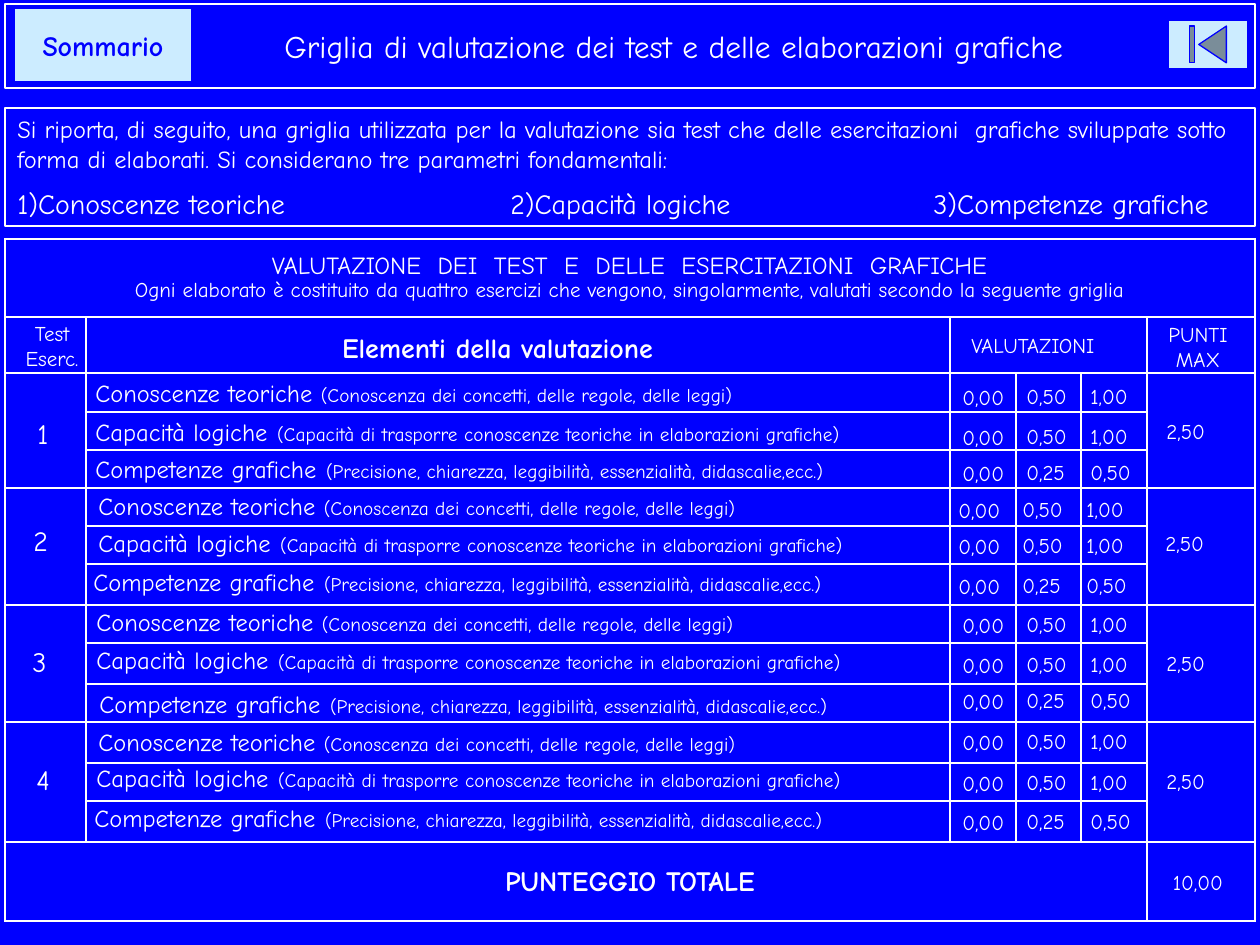
from lxml.etree import SubElement
from pptx import Presentation
from pptx.dml.color import RGBColor
from pptx.enum.shapes import MSO_SHAPE
from pptx.enum.text import MSO_ANCHOR, PP_ALIGN
from pptx.oxml.ns import qn
from pptx.util import Pt

PX = 914400 // 126
COLORS = {"blue": "0000FF", "white": "FFFFFF", "pale": "CCECFF"}
FONT = "Comic Neue"
LEFT, CENTER = PP_ALIGN.LEFT, PP_ALIGN.CENTER


def write(frame, runs, align=LEFT, bold=False, color="white"):
    """Fill the first paragraph with (text, size) runs."""
    frame.word_wrap = True
    para = frame.paragraphs[0]
    para.alignment = align
    para.font.name = FONT
    para.font.bold = bold
    para.font.color.rgb = RGBColor.from_string(COLORS[color])
    para.font.size = Pt(runs[0][1])
    for text, size in runs:
        run = para.add_run()
        run.text = text
        if size != runs[0][1]:
            run.font.size = Pt(size)


def label(x, y, w, h, runs, align=LEFT, bold=False):
    box = slide.shapes.add_textbox(x * PX, y * PX, w * PX, h * PX)
    write(box.text_frame, runs, align, bold)


prs = Presentation()
prs.slide_width, prs.slide_height = 1260 * PX, 945 * PX
slide = prs.slides.add_slide(prs.slide_layouts[6])
slide.background.fill.solid()
slide.background.fill.fore_color.rgb = RGBColor.from_string(COLORS["blue"])

# Buttons and framed boxes
shapes = []
for kind, x, y, w, h, fill, line, width in [
    (MSO_SHAPE.ACTION_BUTTON_CUSTOM, 14, 8, 178, 74, "pale", "blue", 0),
    (MSO_SHAPE.RECTANGLE, 5, 4, 1250, 84, None, "white", 0.75),
    (MSO_SHAPE.RECTANGLE, 5, 108, 1250, 118, None, "white", 1),
    (MSO_SHAPE.ACTION_BUTTON_BEGINNING, 1168, 20, 80, 49, "pale", "blue", 0),
]:
    shape = slide.shapes.add_shape(kind, x * PX, y * PX, w * PX, h * PX)
    shape.shadow.inherit = False
    if fill:
        shape.fill.solid()
        shape.fill.fore_color.rgb = RGBColor.from_string(COLORS[fill])
    else:
        shape.fill.background()
    shape.line.color.rgb = RGBColor.from_string(COLORS[line])
    shape.line.width = Pt(width)
    shapes.append(shape)

button, title, intro, _ = shapes
write(button.text_frame, [("Sommario", 16)], CENTER, True, "blue")
title.text_frame.margin_left = 100 * PX
write(title.text_frame,
      [("Griglia di valutazione dei test e delle elaborazioni grafiche", 18)], CENTER)
intro.text_frame.vertical_anchor = MSO_ANCHOR.TOP
write(intro.text_frame, [(
    "Si riporta, di seguito, una griglia utilizzata per la valutazione sia test che "
    "delle esercitazioni  grafiche sviluppate sotto forma di elaborati. "
    "Si considerano tre parametri fondamentali:", 14)])

# Table grid
cols = [81, 864, 66, 65, 66, 108]
rows = [78, 56, 39, 38, 38, 38, 38, 41, 38, 41, 38, 41, 38, 41, 79]
grid = slide.shapes.add_table(len(rows), len(cols), 5 * PX, 239 * PX,
                              sum(cols) * PX, sum(rows) * PX).table
grid.first_row = grid.horz_banding = False
for col, width in zip(grid.columns, cols):
    col.width = width * PX
for row, height in zip(grid.rows, rows):
    row.height = height * PX
for cell in grid.iter_cells():
    cell.margin_left = cell.margin_right = cell.margin_top = cell.margin_bottom = 0
    cell.vertical_anchor = MSO_ANCHOR.MIDDLE
    props = cell._tc.get_or_add_tcPr()
    for side in ("lnL", "lnR", "lnT", "lnB"):
        line = SubElement(props, qn(f"a:{side}"), w=str(Pt(1)))
        SubElement(SubElement(line, qn("a:solidFill")), qn("a:srgbClr"),
                   val=COLORS["white"])
    cell.fill.background()
    if cell is not None:
        SubElement(cell.text_frame.paragraphs[0]._p, qn("a:endParaRPr"), sz="800")

spans = [(0, 0, 0, 5), (1, 2, 1, 4), (14, 0, 14, 4)]
spans += [(top, col, top + 2, col) for top in range(2, 14, 3) for col in (0, 5)]
for top, left, bottom, right in spans:
    grid.cell(top, left).merge(grid.cell(bottom, right))

head = grid.cell(0, 0).text_frame
head.add_paragraph()
for para, text, size in zip(head.paragraphs, [
    "VALUTAZIONE  DEI  TEST  E  DELLE  ESERCITAZIONI  GRAFICHE",
    "Ogni elaborato è costituito da quattro esercizi che vengono, singolarmente, "
    "valutati secondo la seguente griglia",
], (14, 12)):
    para.add_run().text = text
    para.alignment = CENTER
    para.line_spacing = 0.9
    para.font.name = FONT
    para.font.size = Pt(size)
    para.font.color.rgb = RGBColor.from_string(COLORS["white"])

# Parameters, column heads and total
for x, y, w, h, text, size, align, bold in [
    (5, 180, 328, 47, "1)Conoscenze teoriche", 16, LEFT, False),
    (498, 180, 265, 47, "2)Capacità logiche", 16, LEFT, False),
    (921, 180, 334, 47, "3)Competenze grafiche", 16, LEFT, False),
    (6, 314, 92, 63, "Test Eserc.", 12, CENTER, False),
    (304, 324, 387, 47, "Elementi della valutazione", 16, CENTER, True),
    (959, 326, 213, 38, "VALUTAZIONI", 12, LEFT, False),
    (1142, 315, 112, 63, "PUNTI MAX", 12, CENTER, False),
    (431, 857, 398, 47, "PUNTEGGIO TOTALE", 16, CENTER, True),
    (1148, 863, 100, 38, "10,00", 12, CENTER, False),
]:
    label(x, y, w, h, [(text, size)], align, bold)

# Four exercises, each judged on the same three criteria
criteria = [
    ([("Conoscenze teoriche ", 14),
      ("(Conoscenza dei concetti, delle regole, delle leggi)", 11)],
     42, ("0,00", "0,50", "1,00")),
    ([("Capacità logiche", 14), (" ", 16),
      ("(Capacità di trasporre conoscenze teoriche in elaborazioni grafiche)", 11)],
     47, ("0,00", "0,50", "1,00")),
    ([("Competenze grafiche", 14), (" ", 16),
      ("(Precisione, chiarezza, leggibilità, essenzialità, didascalie,ecc.)", 11)],
     47, ("0,00", "0,25", "0,50")),
]
# number place, points place, criterion places, score left, score tops
tests = [
    ((25, 410), (1154, 412), [(83, 372), (83, 407), (83, 444)], 950, (378, 418, 454)),
    ((21, 517), (1153, 524), [(86, 485), (86, 518), (81, 557)], 946, (491, 527, 567)),
    ((20, 638), (1154, 644), [(84, 601), (84, 635), (87, 679)], 950, (606, 646, 682)),
    ((24, 756), (1154, 762), [(86, 721), (84, 753), (82, 793)], 950, (723, 764, 803)),
]
for num, (spot, points, places, left, tops) in enumerate(tests, 1):
    label(*spot, 42, 47, [(str(num), 16)])
    label(*points, 83, 38, [("2,50", 12)])
    for (runs, height, marks), place, top in zip(criteria, places, tops):
        label(*place, 845, height, runs)
        for i, mark in enumerate(marks):
            label(left + 64 * i, top - min(i, 1), 78 if i < 2 else 70, 38, [(mark, 12)])

prs.save("out.pptx")
